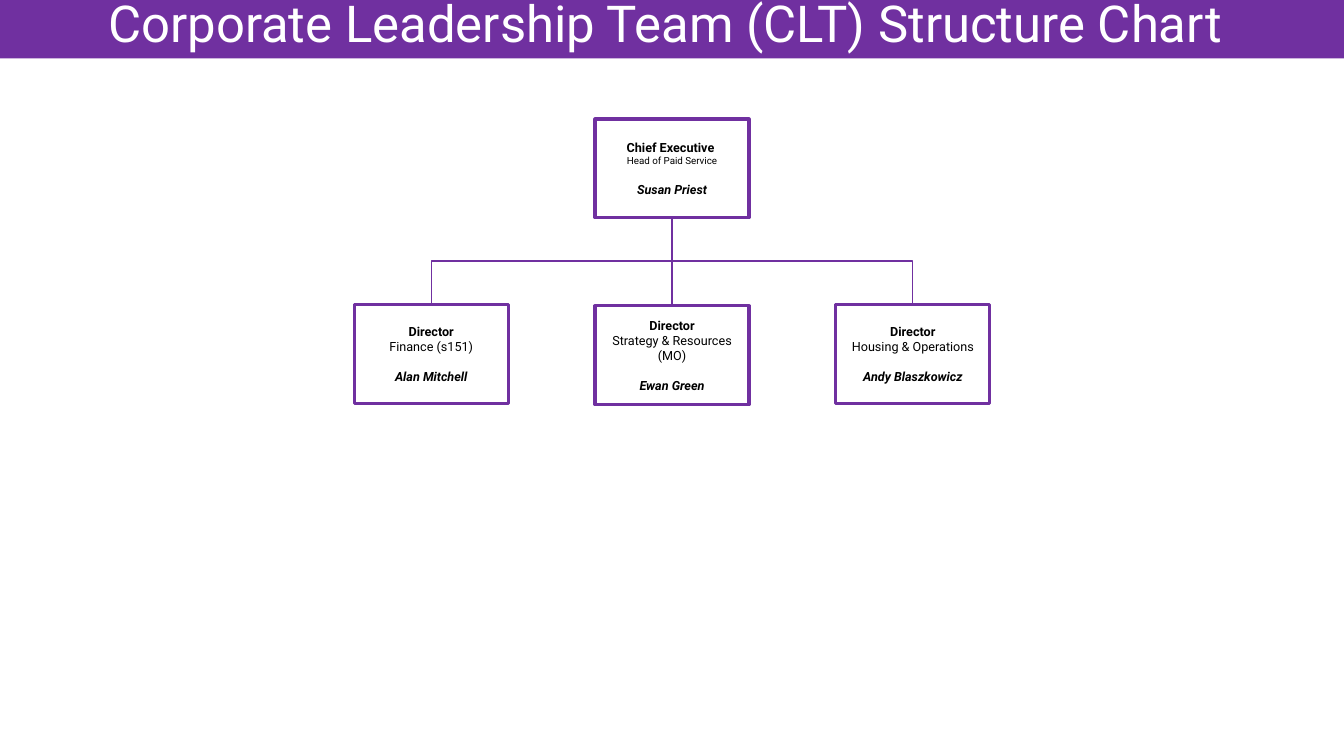
from pptx import Presentation
from pptx.dml.color import RGBColor
from pptx.enum.shapes import MSO_CONNECTOR, MSO_SHAPE
from pptx.enum.text import MSO_ANCHOR, PP_ALIGN
from pptx.oxml.ns import qn
from pptx.util import Pt

COLORS = {"purple": "7030A0", "white": "FFFFFF", "black": "000000"}
FONT = "Roboto"
SLIDE_W, SLIDE_H = 960, 540
POST_W, POST_H = 110, 70.5
DIRECTOR_PITCH = 172
DIRECTOR_TOP = 132.5
NAME_GAP = 10.5
BOTTOM, TOP = 2, 0

DIRECTORS = [
    ("Finance (s151)", "Alan Mitchell", 0),
    ("Strategy & Resources (MO)", "Ewan Green", 1),
    ("Housing & Operations", "Andy Blaszkowicz", 0),
]


def color(key):
    return RGBColor.from_string(COLORS[key])


def add_line(paragraph, text, size, ink="black", bold=False, italic=False):
    paragraph.text = text
    paragraph.alignment = PP_ALIGN.CENTER
    font = paragraph.font
    font.name, font.size = FONT, Pt(size)
    font.bold, font.italic = bold, italic
    font.color.rgb = color(ink)


def add_banner(slide, left, top, width, height):
    banner = slide.shapes.add_shape(
        MSO_SHAPE.RECTANGLE, Pt(left), Pt(top), Pt(width), Pt(height))
    banner.shadow.inherit = False
    banner.fill.solid()
    banner.fill.fore_color.rgb = color("purple")
    banner.line.fill.background()
    frame = banner.text_frame
    frame.word_wrap = True
    frame.vertical_anchor = MSO_ANCHOR.MIDDLE
    title = frame.paragraphs[0]
    add_line(title, "Corporate Leadership Team (CLT) Structure Chart ", 36.3, "white")
    title.line_spacing = 0.7


def add_post(slide, left, top, title, role, role_size, holder):
    post = slide.shapes.add_shape(
        MSO_SHAPE.RECTANGLE, Pt(left), Pt(top), Pt(POST_W), Pt(POST_H))
    post.shadow.inherit = False
    post.fill.background()
    post.line.color.rgb = color("purple")
    post.line.width = Pt(2.25)
    frame = post.text_frame
    frame.word_wrap = True
    frame.vertical_anchor = MSO_ANCHOR.MIDDLE
    frame.margin_left = frame.margin_right = Pt(2.9)
    frame.margin_top = frame.margin_bottom = Pt(1.45)
    add_line(frame.paragraphs[0], title, 9, bold=True)
    add_line(frame.add_paragraph(), role, role_size)
    name = frame.add_paragraph()
    add_line(name, holder, 9, bold=True, italic=True)
    name.space_before = Pt(NAME_GAP)
    return post


def add_branch(slide, chief, director):
    run = director.left - chief.left
    drop = director.top - chief.top - chief.height
    kind = MSO_CONNECTOR.ELBOW if run else MSO_CONNECTOR.STRAIGHT
    branch = slide.shapes.add_connector(kind, 0, 0, 0, 0)
    branch.begin_connect(chief, BOTTOM)
    branch.end_connect(director, TOP)
    if run:
        middle_x = chief.left + (chief.width + run) // 2
        middle_y = director.top - drop // 2
        branch.left, branch.top = middle_x - drop // 2, middle_y - abs(run) // 2
        branch.width, branch.height = drop, abs(run)
        frame = branch._element.spPr.find(qn("a:xfrm"))
        frame.rot = 270 if run > 0 else 90
        frame.flipH = run > 0
    branch.line.color.rgb = color("purple")
    branch.line.width = Pt(1)
    properties = branch._element.spPr
    properties.append(properties.makeelement(qn("a:effectLst"), {}))


def add_leadership_chart(slide, left, top, width):
    center_left = left + (width - POST_W) / 2
    chief = add_post(slide, center_left, top, "Chief Executive ",
                     "Head of Paid Service", 7, "Susan Priest")
    for index, (role, holder, offset) in enumerate(DIRECTORS):
        director = add_post(
            slide, center_left + (index - 1) * DIRECTOR_PITCH,
            top + DIRECTOR_TOP + offset, "Director", role, 9, holder)
        add_branch(slide, chief, director)


def main():
    presentation = Presentation()
    presentation.slide_width, presentation.slide_height = Pt(SLIDE_W), Pt(SLIDE_H)
    slide = presentation.slides.add_slide(presentation.slide_layouts[6])
    add_banner(slide, 0, 0, SLIDE_W, 41.75)
    add_leadership_chart(slide, 0, 85, SLIDE_W)
    presentation.save("out.pptx")


if __name__ == "__main__":
    main()
